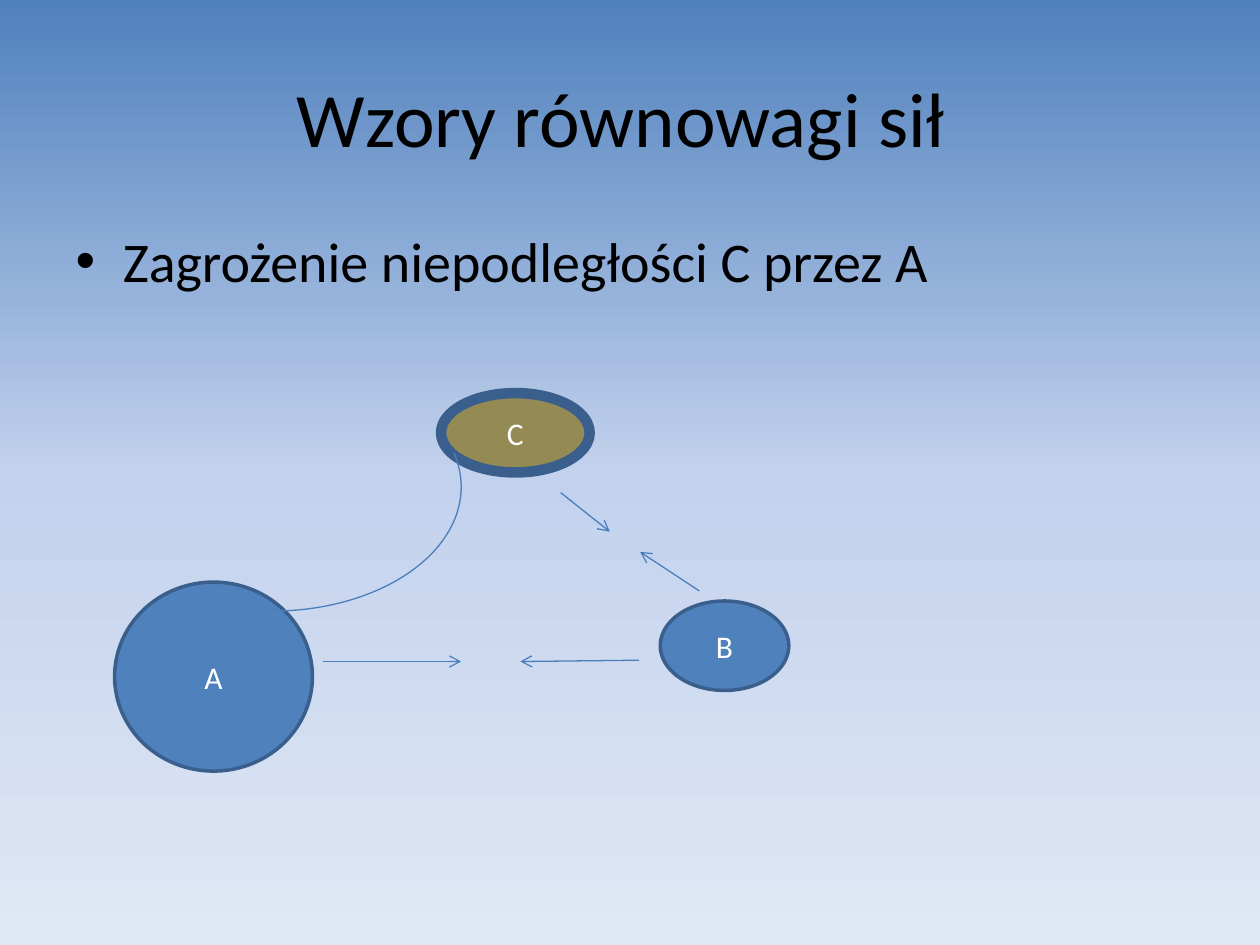
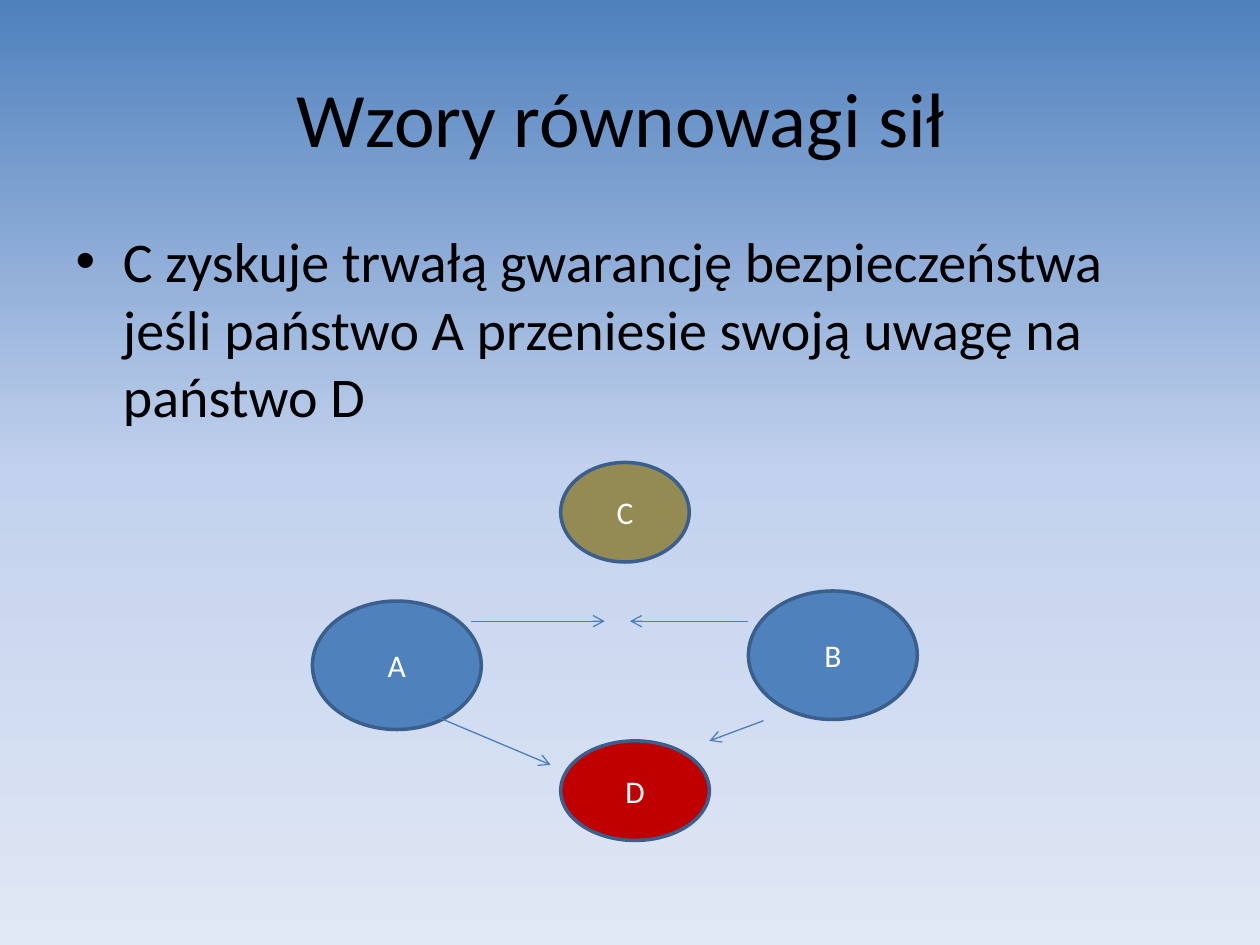
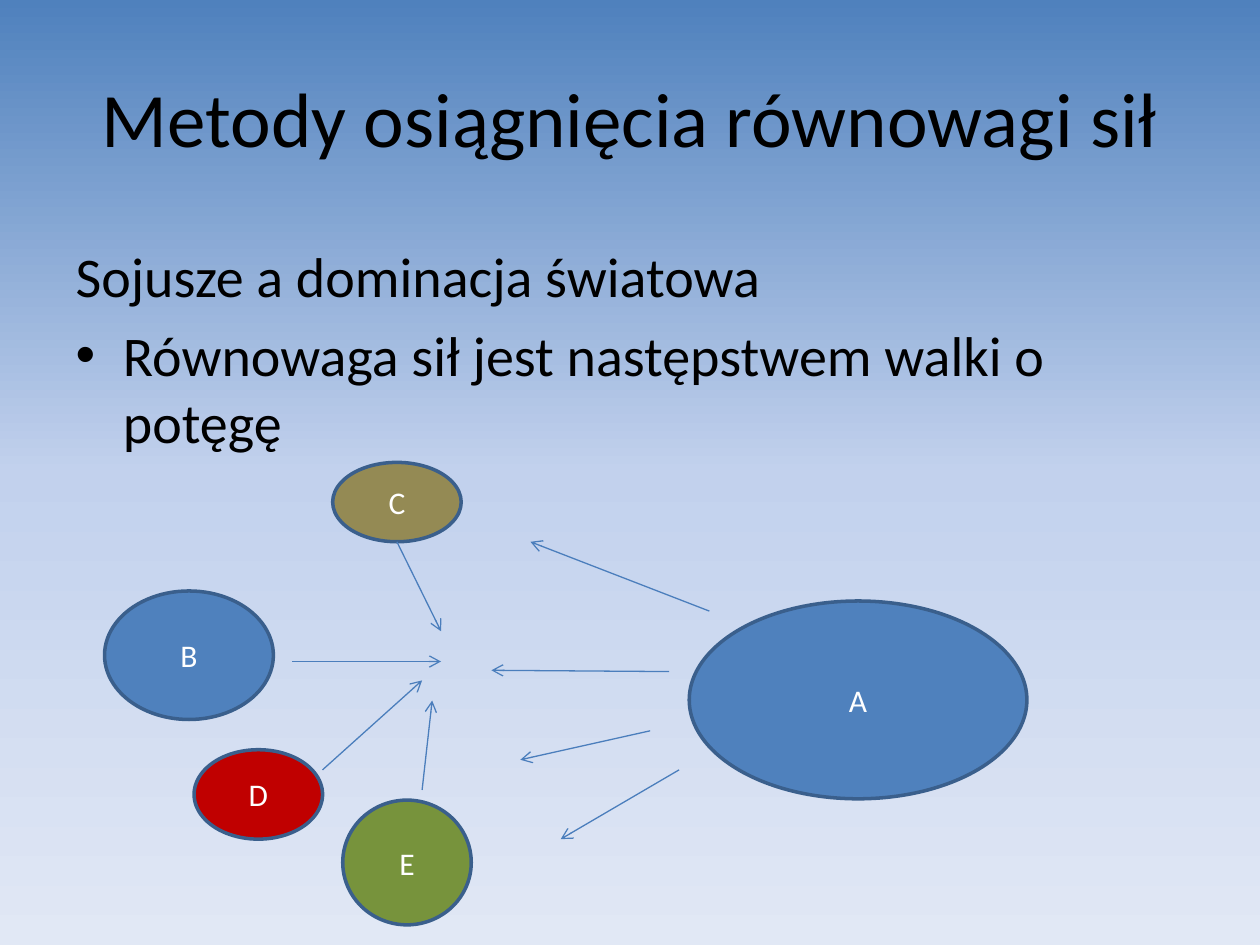
import copy
import dataclasses

import pptx
import pptx.dml.color
import pptx.enum.shapes
import pptx.enum.text
import pptx.oxml
import pptx.oxml.ns
import pptx.util

Inches = pptx.util.Inches
SHAPES = pptx.enum.shapes.MSO_SHAPE


@dataclasses.dataclass(frozen=True)
class Theme:
    font: str = "Calibri"
    title_size: int = 44
    body_size: int = 32
    label_size: int = 18
    text: str = "000000"
    label: str = "FFFFFF"
    blue: str = "4F81BD"
    olive: str = "948A54"
    red: str = "C00000"
    green: str = "77933C"
    outline: str = "3A5F8C"
    arrow: str = "4B7EBC"
    outline_width: float = 2
    arrow_width: float = 0.75
    background: tuple = ((0, "4F81BD"), (0.5, "C2D1ED"), (1, "E1E8F5"))


THEME = Theme()


def rgb(code):
    return pptx.dml.color.RGBColor.from_string(code)


def add_element(parent, tag, **attributes):
    child = pptx.oxml.parse_xml(f"<{tag} {pptx.oxml.ns.nsdecls('a')}/>")
    for name, value in attributes.items():
        child.set(name, value)
    parent.append(child)


def style_text(frame, size, color, alignment=None):
    for para in frame.paragraphs:
        para.alignment = alignment
        for span in para.runs:
            span.font.name = THEME.font
            span.font.size = pptx.util.Pt(size)
            span.font.color.rgb = rgb(color)


def style_line(line, color, width):
    line.color.rgb = rgb(color)
    line.width = pptx.util.Pt(width)


def place(box, left, top, width, height):
    box.left, box.top = Inches(left), Inches(top)
    box.width, box.height = Inches(width), Inches(height)


def paint_background(master):
    fill = master.background.fill
    fill.gradient()
    fill.gradient_angle = 270
    stops = next(master.element.iter(pptx.oxml.ns.qn("a:gsLst")))
    stops.append(copy.deepcopy(stops[-1]))
    for stop, (position, color) in zip(fill.gradient_stops, THEME.background):
        stop.position = position
        stop.color.rgb = rgb(color)


def add_page(deck, title, lines, body_top=1.75, plain_lines=()):
    page = deck.slides.add_slide(deck.slide_layouts[1])
    heading, body = page.shapes.title, page.placeholders[1]
    place(heading, 0.5, 0.3, 9, 1.25)
    heading.text_frame.text = title
    style_text(heading.text_frame, THEME.title_size, THEME.text,
               pptx.enum.text.PP_ALIGN.CENTER)
    place(body, 0.5, body_top, 9, 4.95)
    body.text_frame.text = "\n".join(lines)
    style_text(body.text_frame, THEME.body_size, THEME.text)
    for index in plain_lines:
        para = body.text_frame.paragraphs[index]
        add_element(para._p.get_or_add_pPr(), "a:buNone")
    return page


def add_state(page, name, left, top, width, height, color=THEME.blue,
              outline_width=THEME.outline_width):
    state = page.shapes.add_shape(SHAPES.OVAL, Inches(left), Inches(top),
                                  Inches(width), Inches(height))
    state.shadow.inherit = False
    state.fill.solid()
    state.fill.fore_color.rgb = rgb(color)
    style_line(state.line, THEME.outline, outline_width)
    state.text_frame.text = name
    state.text_frame.vertical_anchor = pptx.enum.text.MSO_ANCHOR.MIDDLE
    style_text(state.text_frame, THEME.label_size, THEME.label,
               pptx.enum.text.PP_ALIGN.CENTER)


def add_arrows(page, *arrows):
    for ends in arrows:
        arrow = page.shapes.add_connector(
            pptx.enum.shapes.MSO_CONNECTOR.STRAIGHT, *map(Inches, ends))
        style_line(arrow.line, THEME.arrow, THEME.arrow_width)
        add_element(arrow.line._get_or_add_ln(), "a:tailEnd", type="arrow")
        add_element(arrow._element.spPr, "a:effectLst")


def add_arc(page, left, top, width, height, start, end):
    arc = page.shapes.add_shape(SHAPES.ARC, Inches(left), Inches(top),
                                Inches(width), Inches(height))
    arc.shadow.inherit = False
    arc.adjustments[0], arc.adjustments[1] = start, end
    arc.fill.background()
    style_line(arc.line, THEME.arrow, THEME.arrow_width)


def build_threat(deck):
    page = add_page(deck, "Wzory równowagi sił ",
                    ["Zagrożenie niepodległości C przez A"])
    add_state(page, "A", 0.91, 4.62, 1.57, 1.5)
    add_state(page, "B", 5.24, 4.77, 1.02, 0.71)
    add_state(page, "C", 3.5, 3.12, 1.18, 0.63, THEME.olive, outline_width=6)
    add_arrows(page,
               (5.55, 4.69, 5.08, 4.38),
               (2.56, 5.25, 3.66, 5.25),
               (5.07, 5.24, 4.13, 5.25),
               (4.45, 3.91, 4.84, 4.22))
    add_arc(page, 0.67, 2.88, 2.99, 1.97, 209.63, 58.27)


def build_guarantee(deck):
    page = add_page(deck, "Wzory równowagi sił ",
                    ["C zyskuje trwałą gwarancję bezpieczeństwa jeśli państwo A "
                     "przeniesie swoją uwagę na państwo D"])
    add_state(page, "A", 2.48, 4.77, 1.34, 1.02)
    add_state(page, "B", 5.94, 4.69, 1.34, 1.02)
    add_state(page, "C", 4.45, 3.67, 1.02, 0.79, THEME.olive)
    add_state(page, "D", 4.45, 5.88, 1.18, 0.79, THEME.red)
    add_arrows(page,
               (3.74, 4.93, 4.8, 4.93),
               (5.94, 4.93, 5, 4.93),
               (3.35, 5.64, 4.37, 6.07),
               (6.06, 5.72, 5.63, 5.88))


def build_alliances(deck):
    page = add_page(deck, "Metody osiągnięcia równowagi sił",
                    ["Sojusze a dominacja światowa",
                     "Równowaga sił jest następstwem walki o potęgę"],
                    body_top=1.87, plain_lines=[0])
    add_state(page, "A", 5.47, 4.77, 2.68, 1.57)
    add_state(page, "B", 0.83, 4.69, 1.34, 1.02)
    add_state(page, "C", 2.64, 3.67, 1.02, 0.63, THEME.olive)
    add_state(page, "D", 1.54, 5.95, 1.02, 0.71, THEME.red)
    add_state(page, "E", 2.72, 6.35, 1.02, 0.99, THEME.green)
    add_arrows(page,
               (3.15, 4.3, 3.5, 5.01),
               (2.32, 5.25, 3.5, 5.25),
               (2.56, 6.11, 3.35, 5.4),
               (3.35, 6.27, 3.43, 5.56),
               (5.63, 4.85, 4.21, 4.3),
               (5.31, 5.33, 3.9, 5.32),
               (5.16, 5.8, 4.13, 6.03),
               (5.39, 6.11, 4.45, 6.66))


def main():
    deck = pptx.Presentation()
    deck.slide_width, deck.slide_height = Inches(10), Inches(7.5)
    paint_background(deck.slide_master)
    build_threat(deck)
    build_guarantee(deck)
    build_alliances(deck)
    deck.save("out.pptx")


if __name__ == "__main__":
    main()
